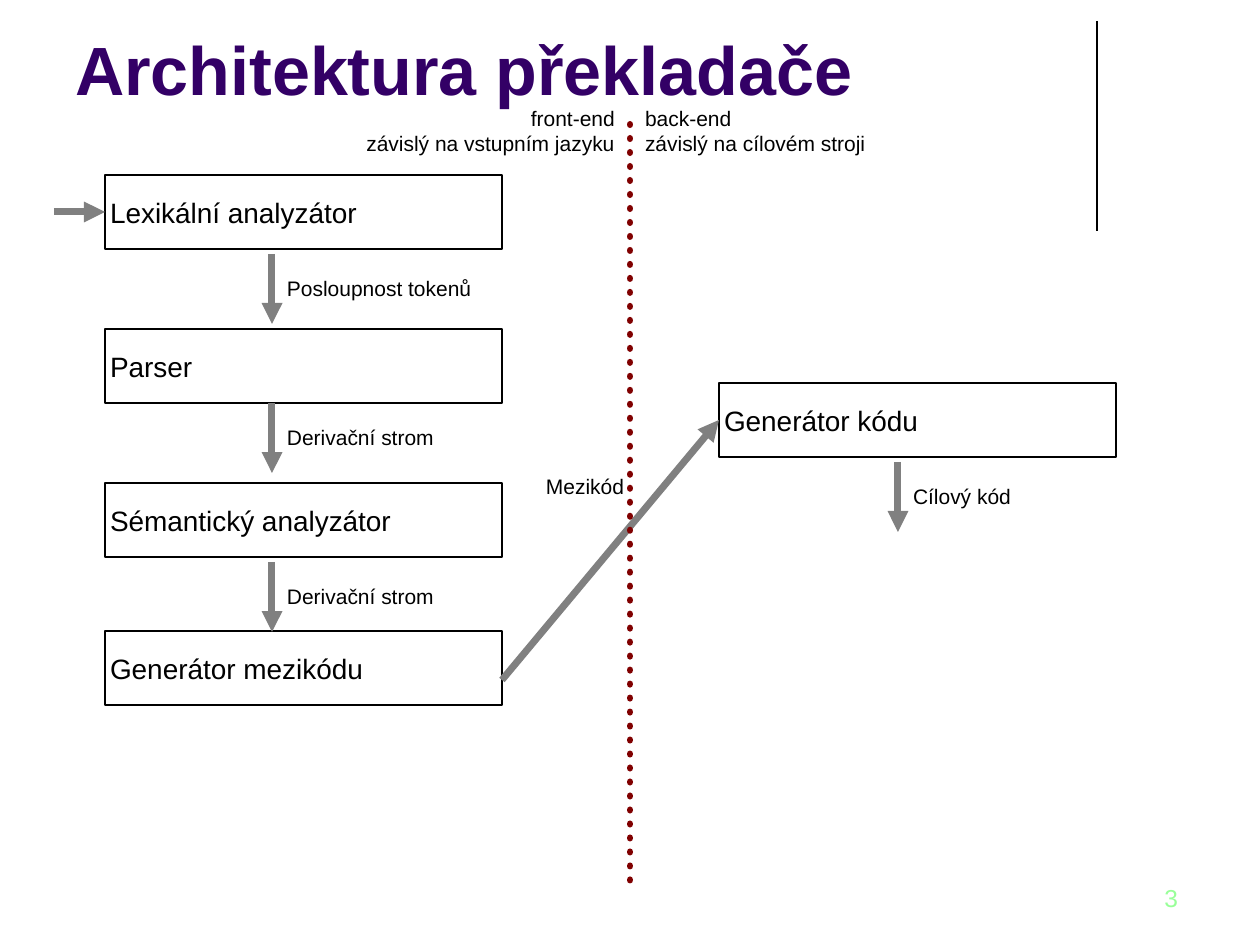
"""Builds a slide showing the front-end and back-end architecture of a compiler."""
from pptx import Presentation
from pptx import util as u
from pptx.dml.color import RGBColor
from pptx.enum import dml, shapes, text
from pptx.oxml.ns import qn
from lxml import etree

BLACK = RGBColor(0x00, 0x00, 0x00)
WHITE = RGBColor(0xFF, 0xFF, 0xFF)
GRAY = RGBColor(0x80, 0x80, 0x80)
MAROON = RGBColor(0x80, 0x00, 0x00)
PURPLE = RGBColor(0x33, 0x00, 0x66)
GREEN = RGBColor(0x99, 0xFF, 0x99)

TITLE = "Architektura překladače"
PAGE = "3"
STAGES = [
    ("Lexikální analyzátor", 105, 175),
    ("Parser", 105, 329),
    ("Sémantický analyzátor", 105, 483),
    ("Generátor mezikódu", 105, 631),
    ("Generátor kódu", 719, 383),
]
OUTPUTS = [
    ("Posloupnost tokenů", 272, 254, 228),
    ("Derivační strom", 272, 403, 228),
    ("Derivační strom", 272, 562, 228),
    ("Cílový kód", 898, 462, 297),
]
NOTES = [
    (["Mezikód"], 541, 462, 139, text.PP_ALIGN.LEFT),
    (["front-end", "závislý na vstupním jazyku"], 343, 106, 277, text.PP_ALIGN.RIGHT),
    (["back-end", "závislý na cílovém stroji"], 640, 106, 258, text.PP_ALIGN.LEFT),
]
STAGE_W, STAGE_H = 397, 74
ARROW_LEN, LABEL_GAP, LABEL_H = 70, 10, 49
PX = u.Inches(1) / 126


def px(*values):
    return [round(v * PX) for v in values]


def write(tf, lines, size, color, align=text.PP_ALIGN.LEFT,
          anchor=text.MSO_ANCHOR.MIDDLE, inset=5, bold=False):
    frame = {"word_wrap": True, "auto_size": text.MSO_AUTO_SIZE.NONE,
             "vertical_anchor": anchor}
    for side in ("left", "top", "right", "bottom"):
        frame["margin_" + side] = px(inset)[0]
    for name, value in frame.items():
        setattr(tf, name, value)
    for i, line in enumerate(lines):
        p = tf.paragraphs[0] if i == 0 else tf.add_paragraph()
        p.alignment = align
        r = p.add_run()
        r.text = line
        r.font.color.rgb = color
        for name, value in {"name": "Arial", "size": u.Pt(size), "bold": bold}.items():
            setattr(r.font, name, value)


def add_label(s, lines, x, y, w, align=text.PP_ALIGN.LEFT):
    sp = s.shapes.add_textbox(*px(x, y, w, LABEL_H))
    write(sp.text_frame, lines, 12, BLACK, align)


def add_stage(s, name, x, y):
    sp = s.shapes.add_shape(shapes.MSO_SHAPE.RECTANGLE, *px(x, y, STAGE_W, STAGE_H))
    sp.shadow.inherit = False
    sp.fill.solid()
    sp.fill.fore_color.rgb = WHITE
    sp.line.color.rgb = BLACK
    sp.line.width = u.Pt(0.75)
    write(sp.text_frame, [name], 16, BLACK)
    return sp


def add_line(s, x1, y1, x2, y2, color=GRAY, width=4, arrow=True):
    sp = s.shapes.add_connector(shapes.MSO_CONNECTOR.STRAIGHT, *px(x1, y1, x2, y2))
    sp.line.color.rgb = color
    sp.line.width = u.Pt(width)
    etree.SubElement(sp._element.spPr, qn("a:effectLst"))
    if arrow:
        etree.SubElement(sp.line._get_or_add_ln(), qn("a:tailEnd"), type="triangle")
    return sp


def main():
    prs = Presentation()
    prs.slide_width, prs.slide_height = px(1260, 945)
    s = prs.slides.add_slide(prs.slide_layouts[5])
    add_line(s, 1097, 21, 1097, 231, BLACK, 0.75, False)

    title = s.shapes.title
    title.left, title.top, title.width, title.height = px(63, 16, 1040, 99)
    write(title.text_frame, [TITLE], 39, PURPLE, anchor=text.MSO_ANCHOR.BOTTOM,
          inset=12, bold=True)
    title.text_frame.margin_bottom = px(6)[0]

    page = s.shapes.add_textbox(*px(896, 866, 294, 63))
    write(page.text_frame, [PAGE], 14, GREEN, text.PP_ALIGN.RIGHT, inset=12)

    stages = {name: add_stage(s, name, x, y) for name, x, y in STAGES}
    for name, x, y, w in OUTPUTS:
        add_line(s, x, y, x, y + ARROW_LEN)
        add_label(s, [name], x + LABEL_GAP, y + LABEL_GAP, w)

    source = add_line(s, 54, 212, 105, 212)
    source.end_connect(stages["Lexikální analyzátor"], 1)
    bridge = add_line(s, 502, 680, 719, 420)
    bridge.end_connect(stages["Generátor kódu"], 1)

    divider = add_line(s, 630, 880, 630, 115, MAROON, arrow=False)
    divider.line.dash_style = dml.MSO_LINE.ROUND_DOT
    divider.line._get_or_add_ln().set("cap", "rnd")
    for note in NOTES:
        add_label(s, *note)

    prs.save("out.pptx")


if __name__ == "__main__":
    main()
